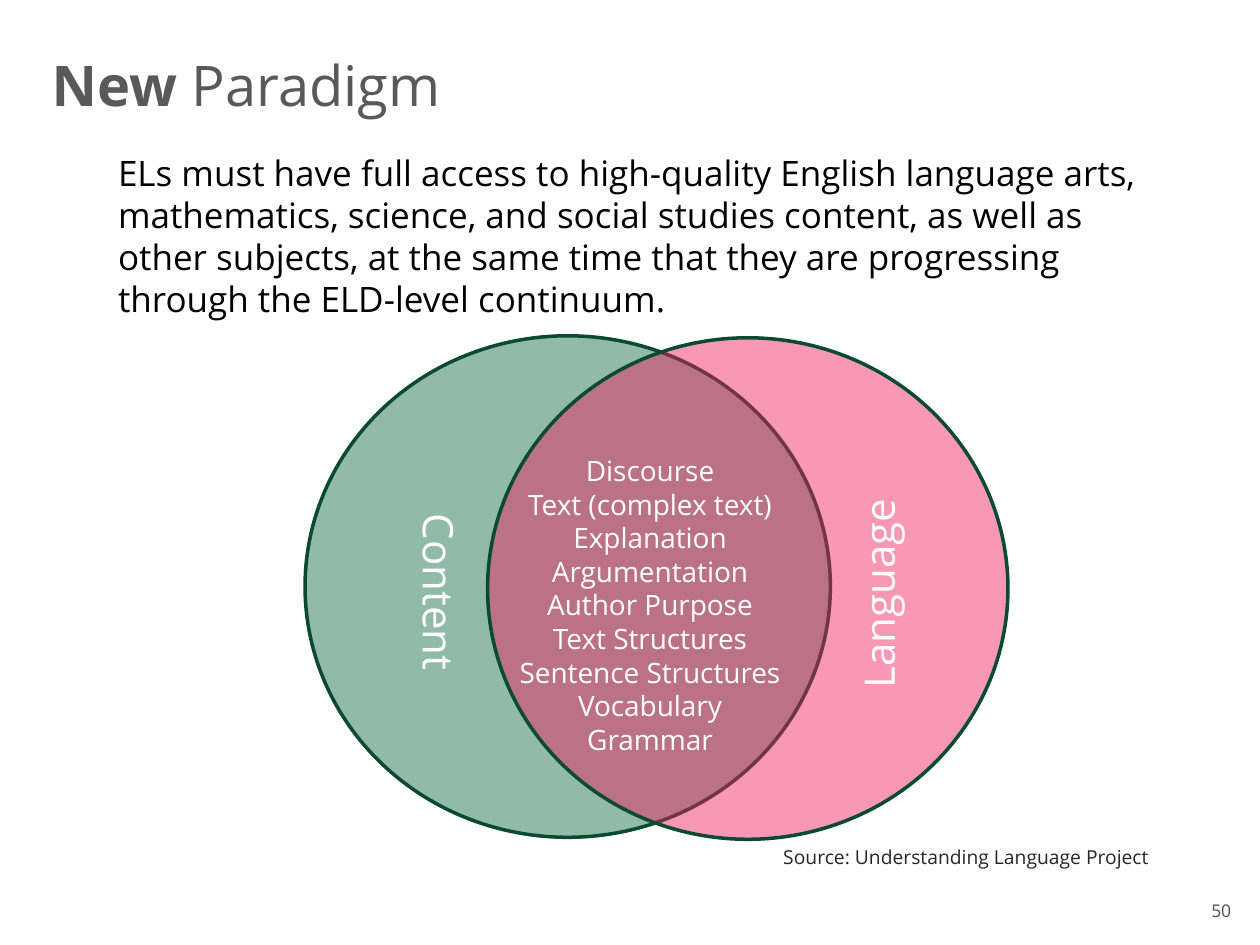
from dataclasses import dataclass

from lxml import etree
from pptx import Presentation
from pptx.dml.color import RGBColor
from pptx.enum.shapes import MSO_SHAPE
from pptx.enum.text import MSO_ANCHOR, PP_ALIGN
from pptx.oxml.ns import qn
from pptx.util import Cm, Pt

LEFT, MID, RIGHT = PP_ALIGN.LEFT, PP_ALIGN.CENTER, PP_ALIGN.RIGHT
TOP, CENTRE = MSO_ANCHOR.TOP, MSO_ANCHOR.MIDDLE
OVAL = MSO_SHAPE.OVAL


@dataclass(frozen=True)
class Theme:
    font: str = "Open Sans"
    # Colours
    head: str = "595959"
    body: str = "000000"
    note: str = "262626"
    page: str = "50514F"
    white: str = "FFFFFF"
    green: str = "0E6641"
    pink: str = "F11B5D"
    edge: str = "0A4B30"
    alpha: int = 45
    # Type sizes
    head_size: int = 32
    label_size: int = 24
    body_size: int = 20
    list_size: int = 16
    note_size: int = 11
    page_size: int = 10


THEME = Theme()

BODY = (
    "ELs must have full access to high-quality English language arts, "
    "mathematics, science, and social studies content, as well as other "
    "subjects, at the same time that they are progressing through the "
    "ELD-level continuum."
)
SHARED = [
    "Discourse", "Text (complex text)", "Explanation", "Argumentation",
    "Author Purpose", "Text Structures", "Sentence Structures",
    "Vocabulary", "Grammar",
]


def style(run, size, color, bold=False):
    font = run.font
    font.name = THEME.font
    font.size = Pt(size)
    font.bold = bold
    font.color.rgb = RGBColor.from_string(color)


def add_text(slide, area, text, size, color, align=LEFT, anchor=TOP, turn=None):
    """Add a text box; area is left, top, width and height in cm."""
    box = slide.shapes.add_textbox(*map(Cm, area))
    frame = box.text_frame
    frame.word_wrap = True
    frame.vertical_anchor = anchor
    frame.text = text
    for para in frame.paragraphs:
        para.alignment = align
        for run in para.runs:
            style(run, size, color)
    if turn:
        frame._txBody.bodyPr.set("vert", turn)
    return box


def add_title(slide, area, strong, rest):
    box = add_text(slide, area, strong, THEME.head_size, THEME.head,
                   anchor=CENTRE)
    para = box.text_frame.paragraphs[0]
    para.runs[0].font.bold = True
    run = para.add_run()
    run.text = rest
    style(run, THEME.head_size, THEME.head)


def add_circle(slide, area, color):
    oval = slide.shapes.add_shape(OVAL, *map(Cm, area))
    oval.shadow.inherit = False
    oval.fill.solid()
    oval.fill.fore_color.rgb = RGBColor.from_string(color)
    tint = oval._element.spPr.find(qn("a:solidFill")).find(qn("a:srgbClr"))
    etree.SubElement(tint, qn("a:alpha")).set("val", str(THEME.alpha * 1000))
    oval.line.color.rgb = RGBColor.from_string(THEME.edge)
    oval.line.width = Pt(2)


def main():
    deck = Presentation()
    deck.slide_width, deck.slide_height = Cm(25.4), Cm(19.05)
    slide = deck.slides.add_slide(deck.slide_layouts[6])

    # Page number, title, statement and source
    add_text(slide, (21.03, 18.01, 4.04, 0.69), "50",
             THEME.page_size, THEME.page, RIGHT)
    add_title(slide, (0.79, 0.1, 23.83, 3.18), "New ", "Paradigm")
    add_text(slide, (2.13, 2.92, 21.67, 4.52), BODY,
             THEME.body_size, THEME.body)
    add_text(slide, (15.54, 16.92, 9.9, 0.74),
             "Source: Understanding Language Project",
             THEME.note_size, THEME.note)

    # Overlapping circles
    add_circle(slide, (6.15, 6.77, 10.59, 10.11), THEME.green)
    add_circle(slide, (9.83, 6.81, 10.49, 10.11), THEME.pink)

    # Shared items and side labels
    add_text(slide, (9.98, 9.02, 6.25, 6.4), "\n".join(SHARED),
             THEME.list_size, THEME.white, MID)
    add_text(slide, (17.07, 6.1, 1.55, 8.03), "Language",
             THEME.label_size, THEME.white, turn="vert270")
    add_text(slide, (7.95, 10.11, 1.55, 5.05), "Content",
             THEME.label_size, THEME.white, turn="vert")

    deck.save("out.pptx")


if __name__ == "__main__":
    main()
